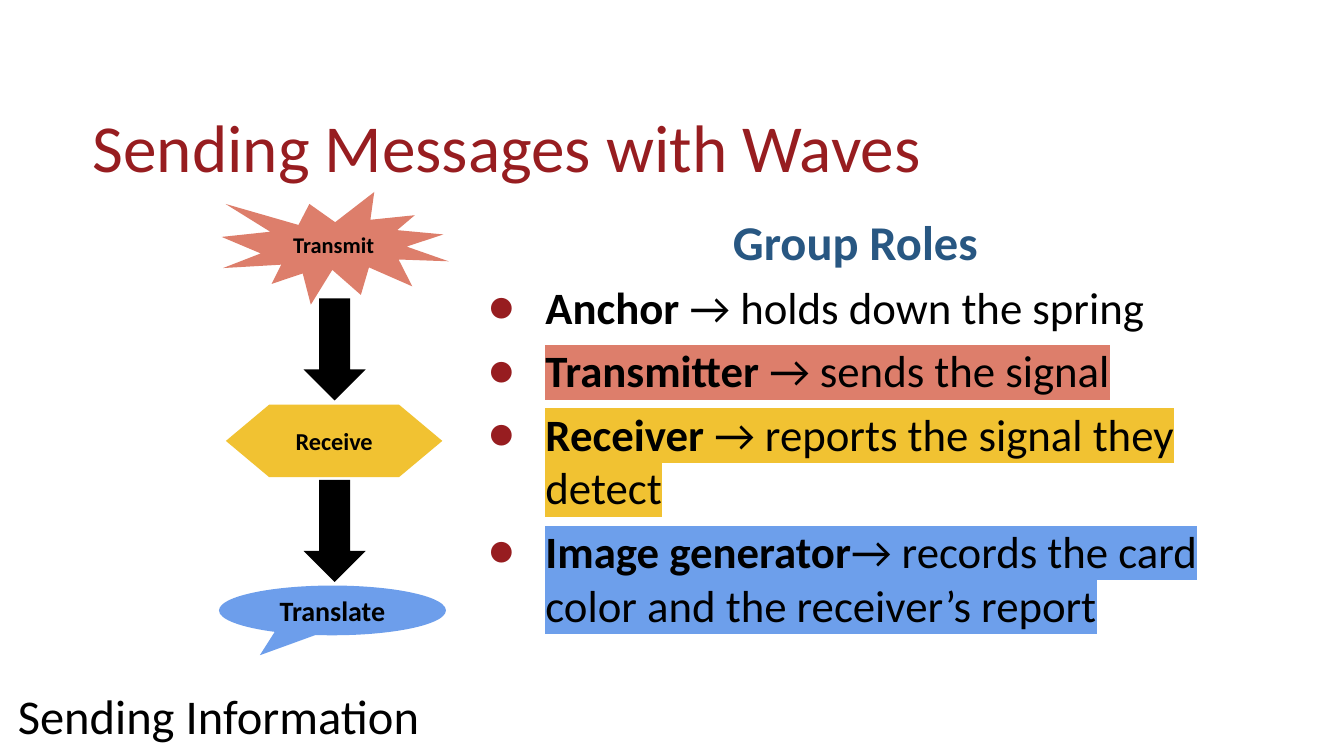
"""Build the slide on sending messages with waves."""
from dataclasses import dataclass

from lxml.etree import SubElement
from pptx import Presentation
from pptx.dml.color import RGBColor
from pptx.enum.shapes import MSO_SHAPE
from pptx.enum.text import MSO_ANCHOR, MSO_AUTO_SIZE, PP_ALIGN
from pptx.oxml import parse_xml
from pptx.oxml.ns import nsdecls, qn
from pptx.util import Cm, Pt


@dataclass(frozen=True)
class Theme:
    font: str = "Calibri"
    black: str = "000000"
    red: str = "971D20"
    navy: str = "285782"
    coral: str = "DD7E6B"
    gold: str = "F1C232"
    blue: str = "6D9EEB"
    mark: str = "6D9FEB"
    title: int = 36
    head: int = 26
    body: int = 24


def put(par, text, font="Calibri", size=24, color="000000", bold=False, mark=None):
    run = par.add_run()
    run.text = text
    run.font.size = Pt(size)
    run.font.bold = bold
    run.font.color.rgb = RGBColor.from_string(color)
    if mark:
        fill = run.font._element.find(qn("a:solidFill"))
        fill.addnext(parse_xml(
            f'<a:highlight {nsdecls("a")}><a:srgbClr val="{mark}"/></a:highlight>'))
    run.font.name = font


class Deck:
    def __init__(self, theme, width, height):
        self.theme = theme
        self.file = Presentation()
        self.file.slide_width, self.file.slide_height = Cm(width), Cm(height)
        self.slide = self.file.slides.add_slide(self.file.slide_layouts[5])

    def frame(self, shape, pads, anchor):
        frame = shape.text_frame
        frame.word_wrap = True
        frame.auto_size = MSO_AUTO_SIZE.NONE
        frame.vertical_anchor = anchor
        (frame.margin_left, frame.margin_top,
         frame.margin_right, frame.margin_bottom) = map(Cm, pads)
        return frame

    def title(self, text, box):
        shape = self.slide.shapes.title
        shape.left, shape.top, shape.width, shape.height = map(Cm, box)
        par = self.frame(shape, (0, 0.13, 0, 0), MSO_ANCHOR.BOTTOM).paragraphs[0]
        par.alignment = PP_ALIGN.LEFT
        par.line_spacing = 0.9
        put(par, text, self.theme.font, self.theme.title, self.theme.red)

    def text(self, text, box, pads, color):
        shape = self.slide.shapes.add_textbox(*map(Cm, box))
        frame = self.frame(shape, pads, MSO_ANCHOR.MIDDLE)
        par = frame.paragraphs[0]
        par.alignment = PP_ALIGN.CENTER
        put(par, text, self.theme.font, self.theme.head, color,
            bold=color == self.theme.navy)
        return frame

    def bullet(self, frame, name, role, mark):
        par = frame.add_paragraph()
        par.space_before = Pt(5.2)
        props = par._p.get_or_add_pPr()
        props.set("marL", str(Cm(1.27)))
        props.set("indent", str(Cm(-1.09)))
        tint = SubElement(props, qn("a:buClr"))
        SubElement(tint, qn("a:srgbClr")).set("val", self.theme.red)
        SubElement(props, qn("a:buFont")).set("typeface", self.theme.font)
        SubElement(props, qn("a:buChar")).set("char", "●")
        look = dict(font=self.theme.font, size=self.theme.body, mark=mark)
        put(par, name, bold=True, **look)
        put(par, role, **look)

    def shape(self, kind, box, fill, text=None, size=12):
        shape = self.slide.shapes.add_shape(kind, *map(Cm, box))
        shape.shadow.inherit = False
        shape.fill.solid()
        shape.fill.fore_color.rgb = RGBColor.from_string(fill)
        shape.line.fill.background()
        if text:
            par = self.frame(shape, (0.25,) * 4, MSO_ANCHOR.MIDDLE).paragraphs[0]
            par.alignment = PP_ALIGN.CENTER
            put(par, text, self.theme.font, size, self.theme.black, bold=True)
        return shape


def main():
    theme = Theme()
    deck = Deck(theme, 25.4, 14.29)
    deck.title("Sending Messages with Waves", (1.75, 0.76, 21.89, 2.77))
    deck.text("Sending Information", (-0.03, 12.55, 8.33, 1.93),
              (0.13, 0, 0.13, 0), theme.black)
    roles = deck.text("Group Roles", (8.79, 4.37, 14.76, 7.32),
                      (0.25, 0, 0.25, 0.13), theme.navy)
    for name, role, mark in (
        ("Anchor ", "→ holds down the spring", None),
        ("Transmitter ", "→ sends the signal", theme.coral),
        ("Receiver", " → reports the signal they detect", theme.gold),
        ("Image generator", "→ records the card color and the receiver’s report",
         theme.mark),
    ):
        deck.bullet(roles, name, role, mark)

    for top in (5.64, 9.07):
        deck.shape(MSO_SHAPE.DOWN_ARROW, (5.74, top, 1.17, 1.93), theme.black)
    deck.shape(MSO_SHAPE.EXPLOSION1, (4.19, 3.63, 4.29, 2.13),
               theme.coral, "Transmit", 12)
    deck.shape(MSO_SHAPE.FLOWCHART_PREPARATION, (4.27, 7.65, 4.09, 1.37),
               theme.gold, "Receive", 13)
    speech = deck.shape(MSO_SHAPE.OVAL_CALLOUT, (4.14, 11.07, 4.29, 0.94),
                        theme.blue, "Translate", 15)
    speech.adjustments[0], speech.adjustments[1] = -0.32, 0.9
    deck.file.save("out.pptx")


if __name__ == "__main__":
    main()
